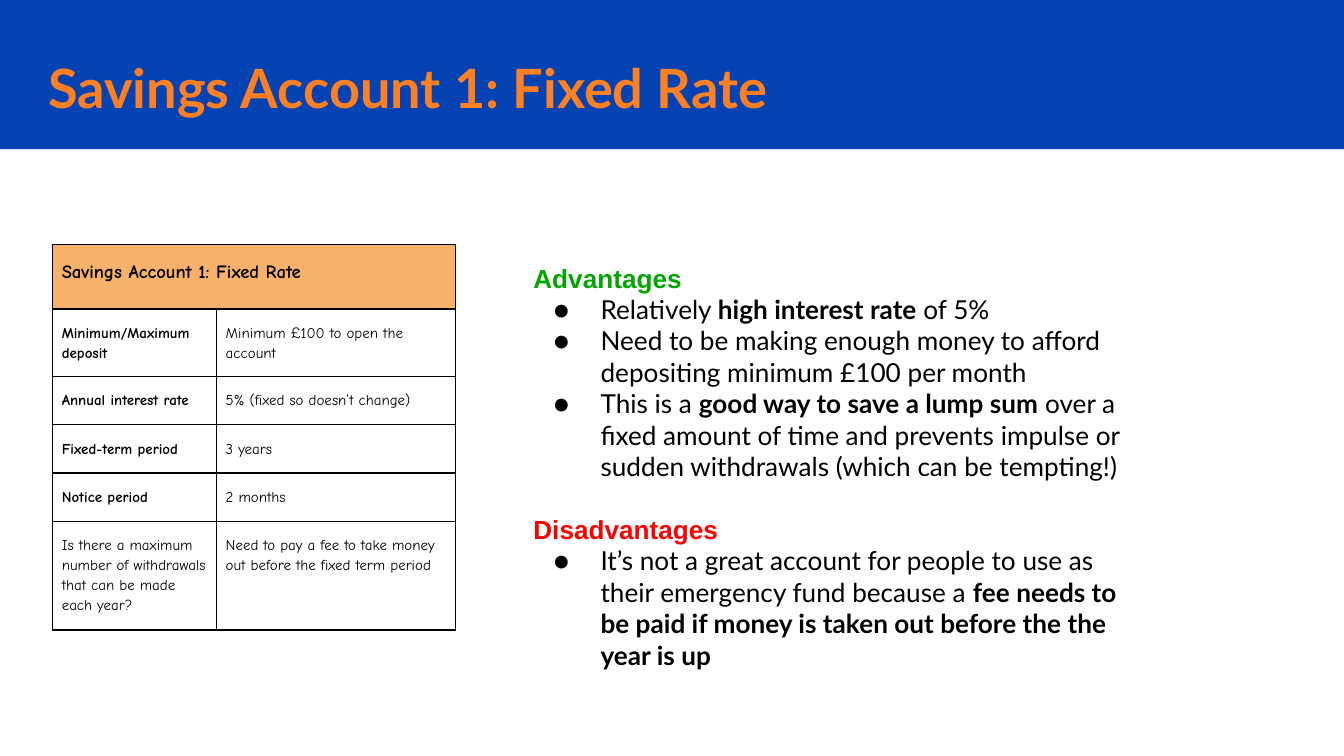
from dataclasses import dataclass

from lxml.etree import SubElement
from pptx import Presentation
from pptx.dml.color import RGBColor
from pptx.enum.shapes import MSO_SHAPE
from pptx.oxml import parse_xml
from pptx.oxml.ns import nsdecls, qn
from pptx.util import Inches, Pt


@dataclass(frozen=True)
class Theme:
    blue: str = "0543B3"
    orange: str = "FF8022"
    sand: str = "F6B26B"
    green: str = "00A500"
    red: str = "FF0000"
    black: str = "000000"
    title: int = 29
    body: int = 14
    head: int = 10
    cell: int = 8
    sans: str = "Lato"
    plain: str = "Arial"
    comic: str = "Comic Neue"


def write(para, text, *, size, face, color, bold=False, space=None, before=0):
    """Add text to a paragraph; each * switches bold on or off."""
    if space:
        para.line_spacing = space
    if before:
        para.space_before = Pt(before)
    for i, part in enumerate(text.split("*")):
        if part:
            run = para.add_run()
            run.text = part
            font = run.font
            font.size, font.name = Pt(size), face
            font.bold = bold != bool(i % 2)
            font.color.rgb = RGBColor.from_string(color)


def bullet(para, color, face):
    props = para._p.get_or_add_pPr()
    props.set("marL", str(Inches(0.5)))
    props.set("indent", str(Inches(-0.35)))
    tint = SubElement(props, qn("a:buClr"))
    SubElement(tint, qn("a:srgbClr")).set("val", color)
    SubElement(props, qn("a:buFont")).set("typeface", face)
    SubElement(props, qn("a:buChar")).set("char", "●")


def border(cell, color):
    props = cell._tc.get_or_add_tcPr()
    for i, side in enumerate("LRTB"):
        props.insert(i, parse_xml(
            f'<a:ln{side} {nsdecls("a")} w="{Pt(1)}"><a:solidFill>'
            f'<a:srgbClr val="{color}"/></a:solidFill></a:ln{side}>'))


class Deck:
    def __init__(self, theme):
        self.theme = theme
        self.file = Presentation()
        self.file.slide_width = Inches(10)
        self.file.slide_height = Inches(10 * 9 / 16)
        self.slide = self.file.slides.add_slide(self.file.slide_layouts[6])

    def band(self, x, y, w, h, color):
        shape = self.slide.shapes.add_shape(
            MSO_SHAPE.RECTANGLE, Inches(x), Inches(y), Inches(w), Inches(h))
        shape.shadow.inherit = False
        shape.fill.solid()
        shape.fill.fore_color.rgb = RGBColor.from_string(color)
        shape.line.fill.background()

    def box(self, x, y, w, h):
        frame = self.slide.shapes.add_textbox(
            Inches(x), Inches(y), Inches(w), Inches(h)).text_frame
        frame.word_wrap = True
        frame.margin_left = frame.margin_right = Inches(0.1)
        frame.margin_top = frame.margin_bottom = Inches(0.1)
        return frame

    def title(self, text):
        t = self.theme
        frame = self.box(0.26, 0.23, 7.61, 0.69)
        write(frame.paragraphs[0], text, size=t.title, face=t.sans,
              color=t.orange, bold=True, space=1.15)

    def points(self, x, y, w, h, groups):
        """Write coloured headings, each with its bulleted points."""
        t = self.theme
        frame = self.box(x, y, w, h)
        for i, (head, color, items) in enumerate(groups):
            para = frame.add_paragraph() if i else frame.paragraphs[0]
            write(para, head, size=t.body, face=t.plain, color=color,
                  bold=True, before=17 if i else 0)
            for item in items:
                para = frame.add_paragraph()
                bullet(para, t.black, t.sans)
                write(para, item, size=t.body, face=t.sans, color=t.black)

    def table(self, x, y, cols, highs, head, rows):
        t = self.theme
        grid = self.slide.shapes.add_table(
            len(highs), len(cols), Inches(x), Inches(y),
            Inches(sum(cols)), Inches(sum(highs))).table
        grid.first_row = grid.horz_banding = False
        for col, wide in zip(grid.columns, cols):
            col.width = Inches(wide)
        for row, high in zip(grid.rows, highs):
            row.height = Inches(high)
        grid.cell(0, 0).merge(grid.cell(0, len(cols) - 1))
        for r, texts in enumerate([(head, "")] + rows):
            for c, text in enumerate(texts):
                cell = grid.cell(r, c)
                cell.margin_left = cell.margin_right = Inches(0.07)
                cell.margin_top = cell.margin_bottom = Inches(0.1)
                if r == 0:
                    cell.fill.solid()
                    cell.fill.fore_color.rgb = RGBColor.from_string(t.sand)
                else:
                    cell.fill.background()
                border(cell, t.black)
                write(cell.text_frame.paragraphs[0], text,
                      size=t.cell if r else t.head, face=t.comic,
                      color=t.black, space=1.15)


def main():
    theme = Theme()
    deck = Deck(theme)
    name = "Savings Account 1: Fixed Rate"
    deck.band(0, 0, 10, 1.11, theme.blue)
    deck.table(
        0.39, 1.82, [1.22, 1.78], [0.48, 0.5, 0.36, 0.36, 0.36, 0.81],
        f"*{name}*", [
            ("*Minimum/Maximum deposit*", "Minimum £100 to open the account"),
            ("*Annual interest rate*", "5% (fixed so doesn’t change)"),
            ("*Fixed-term period*", "3 years"),
            ("*Notice period*", "2 months"),
            ("Is there a maximum number of withdrawals that can be made "
             "each year?",
             "Need to pay a fee to take money out before the fixed term "
             "period"),
        ])
    deck.points(3.87, 1.85, 4.79, 3.03, [
        ("Advantages", theme.green, [
            "Relatively *high interest rate* of 5%",
            "Need to be making enough money to afford depositing minimum "
            "£100 per month",
            "This is a *good way to save a lump sum* over a fixed amount of "
            "time and prevents impulse or sudden withdrawals (which can be "
            "tempting!)",
        ]),
        ("Disadvantages", theme.red, [
            "It’s not a great account for people to use as their emergency "
            "fund because a *fee needs to be paid if money is taken out "
            "before the the year is up*",
        ]),
    ])
    deck.title(name)
    deck.file.save("out.pptx")


if __name__ == "__main__":
    main()
